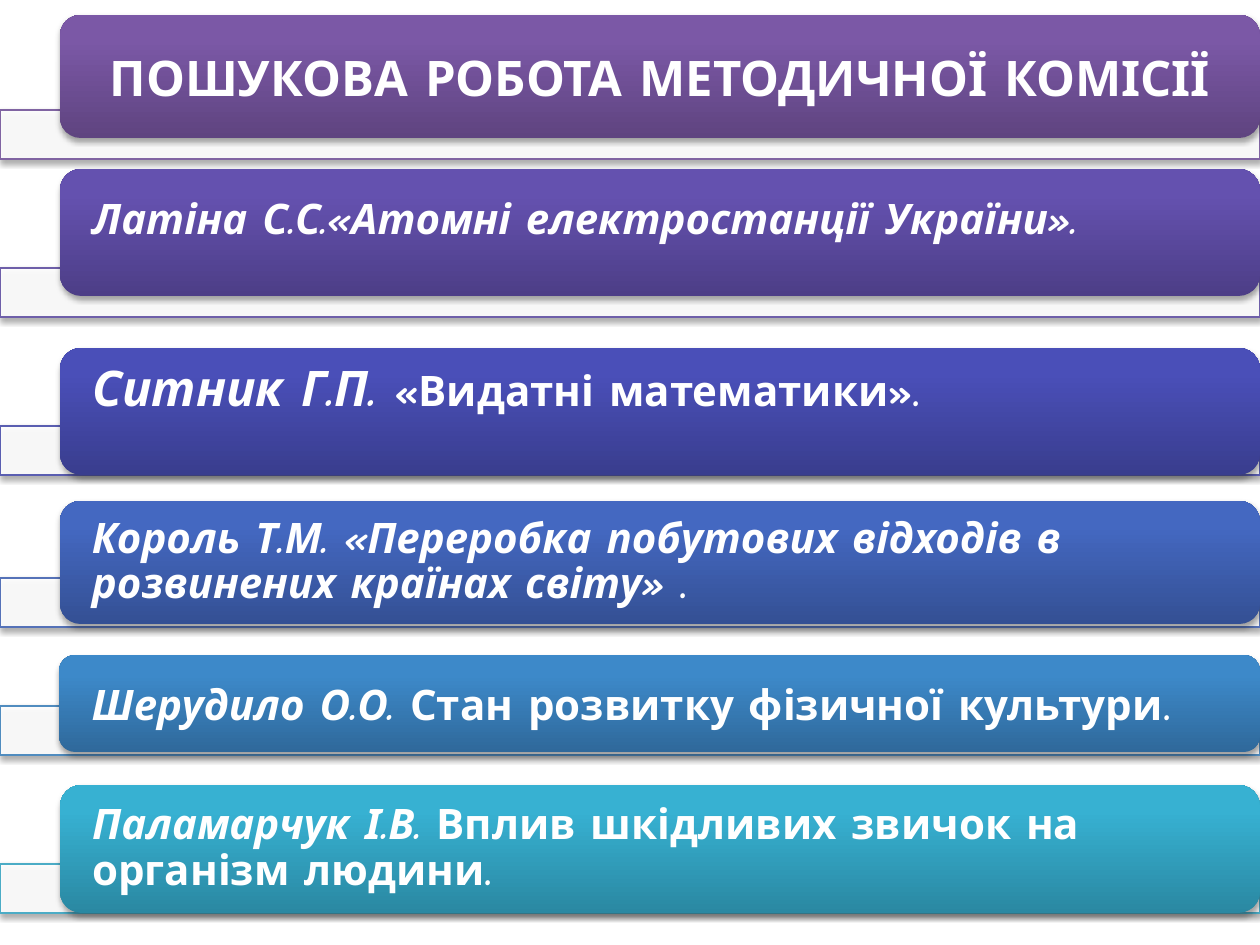
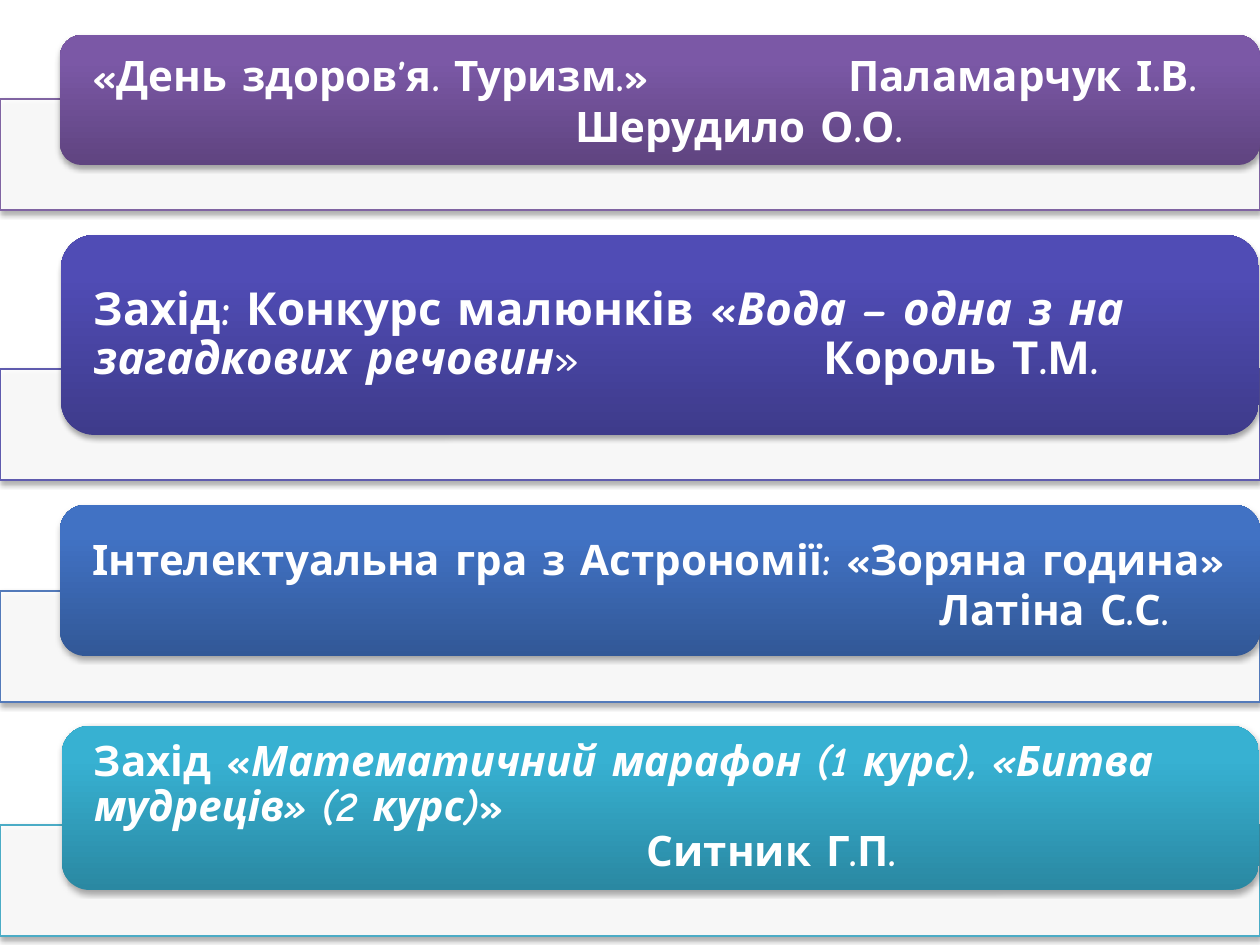
"""Builds two slides of stacked gradient cards about the work of a teaching commission."""
import pptx
import pptx.util
import pptx.dml.color
import pptx.enum.shapes
import pptx.enum.text
import pptx.oxml.ns
import lxml.etree

RGB = pptx.dml.color.RGBColor
WHITE = RGB(0xFF, 0xFF, 0xFF)
PURPLE = RGB(0x80, 0x64, 0xA2), RGB(0x5F, 0x44, 0x80), RGB(0x7B, 0x58, 0xA6)
VIOLET = RGB(0x6E, 0x5F, 0xA9), RGB(0x4D, 0x3E, 0x87), RGB(0x64, 0x51, 0xAF)
INDIGO = RGB(0x5A, 0x5E, 0xB1), RGB(0x39, 0x3D, 0x8E), RGB(0x4A, 0x4F, 0xB8)
BLUE = RGB(0x55, 0x72, 0xB8), RGB(0x34, 0x50, 0x94), RGB(0x44, 0x68, 0xC1)
SKY = RGB(0x50, 0x8C, 0xBF), RGB(0x2F, 0x69, 0x9B), RGB(0x3D, 0x89, 0xC9)
TEAL = RGB(0x4B, 0xAC, 0xC6), RGB(0x2A, 0x88, 0xA2), RGB(0x37, 0xB1, 0xD2)
IRIS = RGB(0x5F, 0x5B, 0xAE), RGB(0x3E, 0x3B, 0x8B), RGB(0x50, 0x4C, 0xB5)
AZURE = RGB(0x53, 0x7A, 0xBA), RGB(0x32, 0x58, 0x97), RGB(0x41, 0x72, 0xC4)

FONT = "Comic Neue"
BODY, LARGE, TITLE = 24, 26, 28
EMU_PER_PX = 914400 / 126
WIDTH, HEIGHT = 1260, 945
TEXT_INDENT = 33
CORNER_INSET = 0.05
LEFT, CENTER = pptx.enum.text.PP_ALIGN.LEFT, pptx.enum.text.PP_ALIGN.CENTER

RESEARCH = {"bar_height": 49, "cards": [
    {"colors": PURPLE, "bar": 110, "pill": (60, 15, 1200, 123), "align": CENTER,
     "lines": [[("ПОШУКОВА РОБОТА МЕТОДИЧНОЇ КОМІСІЇ", "b", TITLE)]]},
    {"colors": VIOLET, "bar": 268, "pill": (60, 169, 1200, 127), "bottom": 30,
     "lines": [[("Латіна С.С.«Атомні електростанції України».", "bi", BODY)]]},
    {"colors": INDIGO, "bar": 426, "pill": (60, 348, 1200, 127), "bottom": 49,
     "lines": [[("Ситник Г.П. ", "bi", TITLE), ("«Видатні математики».", "b", BODY)]]},
    {"colors": BLUE, "bar": 578, "pill": (60, 501, 1200, 123), "spacing": 0.9,
     "lines": [[("Король Т.М. «Переробка побутових відходів в розвинених країнах світу» ",
                 "bi", BODY), (".", "b", BODY)]]},
    {"colors": SKY, "bar": 706, "pill": (59, 655, 1201, 97),
     "lines": [[("Шерудило О.О. ", "bi", BODY),
                ("Стан розвитку фізичної культури.", "b", BODY)]]},
    {"colors": TEAL, "bar": 864, "pill": (60, 785, 1200, 128), "spacing": 0.9,
     "lines": [[("Паламарчук І.В.", "bi", BODY),
                (" Вплив шкідливих звичок на організм людини.", "b", BODY)]]},
]}

EVENTS = {"bar_height": 111, "cards": [
    {"colors": PURPLE, "bar": 99, "pill": (60, 35, 1200, 130), "tabs": (483, 756),
     "lines": [[("«День здоров’я. Туризм.»\tПаламарчук І.В.", "b", BODY)],
               [("\tШерудило О.О.", "b", BODY)]]},
    {"colors": IRIS, "bar": 369, "pill": (61, 235, 1198, 200), "spacing": 0.9, "tabs": (730,),
     "lines": [[("Захід: Конкурс малюнків «", "b", LARGE),
                ("Вода – одна з на загадкових речовин", "bi", LARGE),
                ("»", "", LARGE), ("\tКороль Т.М.", "b", LARGE)]]},
    {"colors": AZURE, "bar": 591, "pill": (60, 505, 1200, 151), "top": 6, "tabs": (847,),
     "lines": [[("Інтелектуальна гра з Астрономії: «Зоряна година»", "b", BODY)],
               [("\tЛатіна С.С.", "b", BODY)]]},
    {"colors": TEAL, "bar": 825, "pill": (62, 726, 1197, 164), "spacing": 0.9, "tabs": (553,),
     "lines": [[("Захід «", "b", BODY),
                ("Математичний марафон (1 курс), «Битва мудреців» (2 курс)", "bi", BODY),
                ("»", "b", BODY)],
               [("\tСитник Г.П.", "b", BODY)]]},
]}


def px(length):
    return pptx.util.Emu(round(length * EMU_PER_PX))


def add_child(parent, tag, **attributes):
    child = lxml.etree.SubElement(parent, pptx.oxml.ns.qn(tag))
    for key, value in attributes.items():
        child.set(key, str(value))
    return child


def add_block(slide, preset, box):
    block = slide.shapes.add_shape(preset, *map(px, box))
    block.shadow.inherit = False
    effects = block.element.spPr.find(pptx.oxml.ns.qn("a:effectLst"))
    shadow = add_child(effects, "a:outerShdw", blurRad=40000, dist=23000,
                       dir=5400000, rotWithShape=0)
    add_child(add_child(shadow, "a:srgbClr", val="000000"), "a:alpha", val=35000)
    return block


def add_bar(slide, top, height, outline):
    bar = add_block(slide, pptx.enum.shapes.MSO_SHAPE.RECTANGLE, (0, top, WIDTH, height))
    bar.fill.solid()
    bar.fill.fore_color.rgb = WHITE
    white = bar.element.spPr.find(".//" + pptx.oxml.ns.qn("a:srgbClr"))
    add_child(white, "a:alpha", val=90000)
    bar.line.color.rgb = outline
    bar.line.width = pptx.util.Pt(0.75)


def add_pill(slide, card):
    pill = add_block(slide, pptx.enum.shapes.MSO_SHAPE.ROUNDED_RECTANGLE, card["pill"])
    pill.line.fill.background()
    pill.fill.gradient()
    pill.fill.gradient_angle = 90
    for stop, color, position in zip(pill.fill.gradient_stops, card["colors"][1:], (0, 0.8)):
        stop.color.rgb = color
        stop.position = position
    write_text(pill.text_frame, card)


def write_text(frame, card):
    frame.word_wrap = True
    frame.vertical_anchor = pptx.enum.text.MSO_ANCHOR.MIDDLE
    side = int(TEXT_INDENT - CORNER_INSET * card["pill"][3])
    frame.margin_left = frame.margin_right = px(side)
    frame.margin_top = px(card.get("top", 0))
    frame.margin_bottom = px(card.get("bottom", 0))
    for index, line in enumerate(card["lines"]):
        paragraph = frame.add_paragraph() if index else frame.paragraphs[0]
        if "tabs" in card:
            stops = add_child(paragraph._p.get_or_add_pPr(), "a:tabLst")
            for tab in card["tabs"]:
                add_child(stops, "a:tab", pos=px(tab), algn="l")
        paragraph.alignment = card.get("align", LEFT)
        paragraph.line_spacing = card.get("spacing", 1.0)
        for text, style, size in line:
            run = paragraph.add_run()
            run.text = text
            run.font.name = FONT
            run.font.size = pptx.util.Pt(size)
            run.font.bold = "b" in style
            run.font.italic = "i" in style
            run.font.color.rgb = WHITE


def main():
    deck = pptx.Presentation()
    deck.slide_width, deck.slide_height = px(WIDTH), px(HEIGHT)
    for page in (RESEARCH, EVENTS):
        slide = deck.slides.add_slide(deck.slide_layouts[6])
        for card in page["cards"]:
            add_bar(slide, card["bar"], page["bar_height"], card["colors"][0])
            add_pill(slide, card)
    deck.save("out.pptx")


if __name__ == "__main__":
    main()
